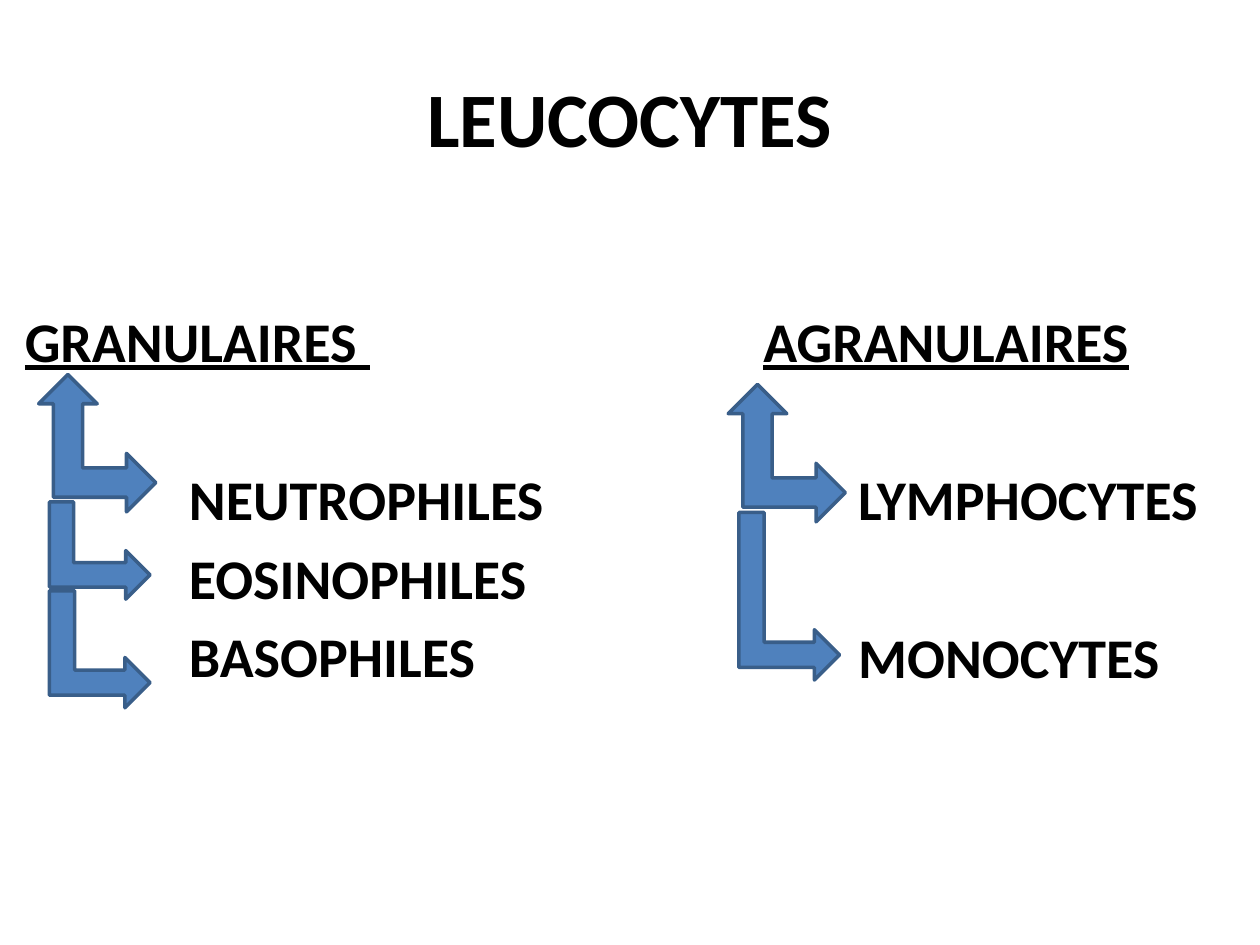
from pptx import Presentation
from pptx.dml.color import RGBColor
from pptx.enum import shapes, text
from pptx.util import Cm, Pt

BLACK = RGBColor(0x00, 0x00, 0x00)
BLUE = RGBColor(0x4F, 0x81, 0xBD)
DARK_BLUE = RGBColor(0x39, 0x5E, 0x89)
FONT = "Calibri"
BODY_SIZE = 32
LINE_GAP = 6.4
SKIPPED_LINE_GAP = 51.8
ARROW_BREADTH = 2.03
FORK_BREADTH = 2.36
FORK_LENGTH = 2.77


def add_lines(slide, box, lines, size=BODY_SIZE, gap=0, underline=False,
              align=text.PP_ALIGN.LEFT, anchor=text.MSO_ANCHOR.TOP):
    """Place bold lines in a text box, with a gap in points between them."""
    frame = slide.shapes.add_textbox(*map(Cm, box)).text_frame
    frame.word_wrap = True
    frame.vertical_anchor = anchor
    frame.margin_left = frame.margin_right = 0
    frame.margin_top = frame.margin_bottom = 0
    for index, line in enumerate(lines):
        paragraph = frame.add_paragraph() if index else frame.paragraphs[0]
        paragraph.alignment = align
        paragraph.space_before = Pt(gap if index else 0)
        run = paragraph.add_run()
        run.text = line
        run.font.name = FONT
        run.font.size = Pt(size)
        run.font.bold = True
        run.font.underline = underline
        run.font.color.rgb = BLACK


def add_arrow(slide, kind, center, top, length, breadth):
    """Add an arrow turned a quarter, given its drawn top and length."""
    left = center - length / 2
    shape = slide.shapes.add_shape(
        kind, Cm(left), Cm(top + (length - breadth) / 2), Cm(length), Cm(breadth))
    shape.rotation = 90
    shape.shadow.inherit = False
    shape.fill.solid()
    shape.fill.fore_color.rgb = BLUE
    shape.line.color.rgb = DARK_BLUE
    shape.line.width = Pt(2)


def add_title(slide, box, title):
    """Place the centred slide title."""
    add_lines(slide, box, [title], size=44, align=text.PP_ALIGN.CENTER,
              anchor=text.MSO_ANCHOR.MIDDLE)


def add_family(slide, box, heading, cells, gap, indents, fork_top, branches):
    """Place a cell family: heading, forked arrow, branch arrows and cells."""
    left, top, width, height = box
    heading_indent, cell_indent = indents
    add_lines(slide, (left + heading_indent, top, width - heading_indent, 1.4),
              [heading], underline=True)
    add_lines(slide, (left + cell_indent, top + 3.2, width - cell_indent, height - 3.2),
              cells, gap=gap)
    add_arrow(slide, shapes.MSO_SHAPE.LEFT_UP_ARROW, left + 1.96, top + fork_top,
              FORK_LENGTH, FORK_BREADTH)
    for branch_top, length in branches:
        add_arrow(slide, shapes.MSO_SHAPE.BENT_UP_ARROW, left + 2.01,
                  top + branch_top, length, ARROW_BREADTH)


def main():
    """Build and save the slide."""
    presentation = Presentation()
    presentation.slide_width = Cm(25.4)
    presentation.slide_height = Cm(19.05)
    slide = presentation.slides.add_slide(presentation.slide_layouts[6])
    add_title(slide, (1.27, 0.76, 22.86, 3.18), "LEUCOCYTES")
    add_family(slide, (0, 6.17, 13.5, 8.2), "GRANULAIRES ",
               ["NEUTROPHILES", "EOSINOPHILES", "BASOPHILES"], LINE_GAP,
               indents=(0.5, 3.81), fork_top=1.38,
               branches=[(3.95, 1.96), (5.74, 2.36)])
    add_family(slide, (13.9, 6.17, 11.5, 8.2), "AGRANULAIRES",
               ["LYMPHOCYTES", "MONOCYTES"], SKIPPED_LINE_GAP,
               indents=(1.49, 3.4), fork_top=1.58, branches=[(4.16, 3.38)])
    presentation.save("out.pptx")


if __name__ == "__main__":
    main()
